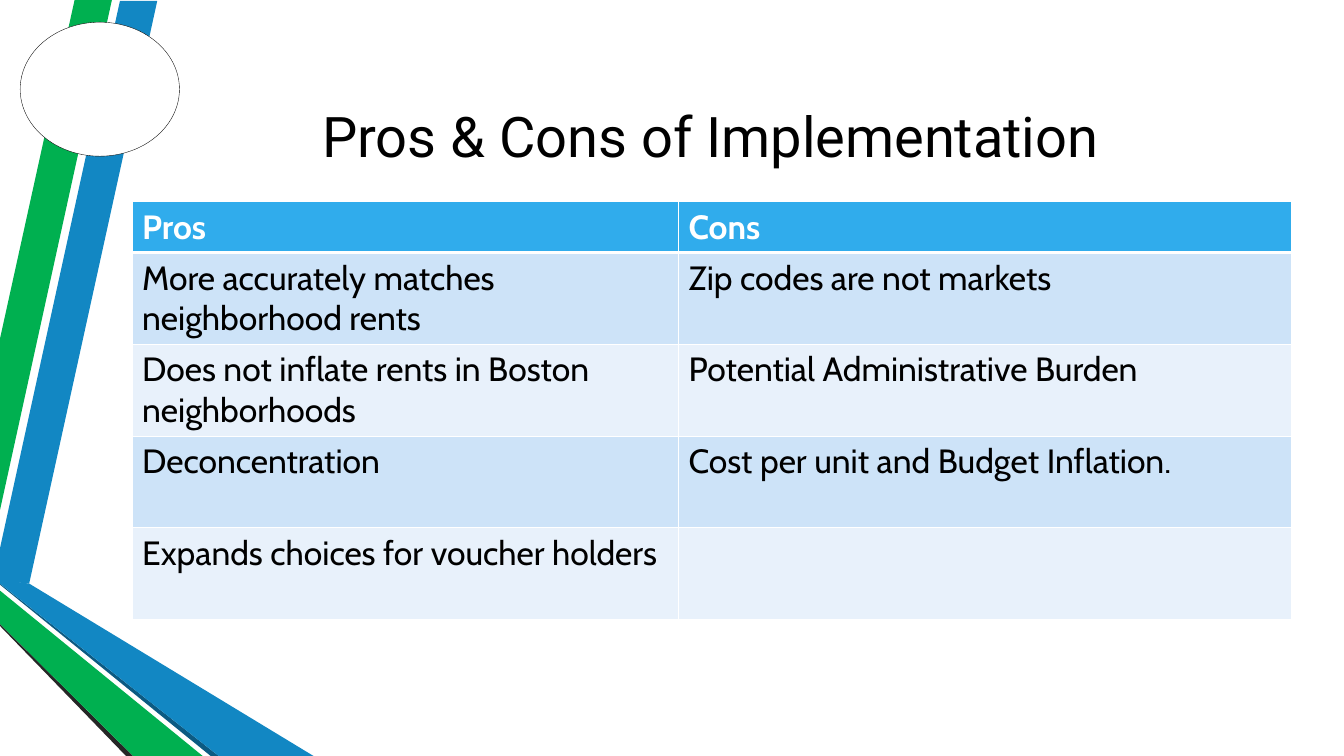
from lxml.etree import SubElement
from pptx import Presentation
from pptx.dml.color import RGBColor
from pptx.enum.shapes import MSO_SHAPE
from pptx.enum.text import MSO_ANCHOR, PP_ALIGN
from pptx.oxml.ns import qn
from pptx.util import Inches, Pt

BLACK = RGBColor(0x00, 0x00, 0x00)
WHITE = RGBColor(0xFF, 0xFF, 0xFF)
BLUE = RGBColor(0x12, 0x87, 0xC3)
DARK_BLUE = RGBColor(0x0C, 0x5A, 0x82)
GREEN = RGBColor(0x00, 0xB0, 0x50)
CHARCOAL = RGBColor(0x26, 0x26, 0x26)
HEADER_BLUE = RGBColor(0x30, 0xAC, 0xEC)
ROW_FILLS = (RGBColor(0xCD, 0xE3, 0xF8), RGBColor(0xE8, 0xF1, 0xFB))

RIBBONS = [
    (BLUE, [(0, 5.44), (0, 5.76), (0.29, 5.79), (1.56, 0.01), (1.19, 0.01)]),
    (GREEN, [(1.11, 0), (0.74, 0), (0, 3.36), (0, 5.06)]),
    (CHARCOAL, [(0, 6.19), (0, 6.21), (1.25, 7.5), (1.32, 7.5)]),
    (DARK_BLUE, [(0, 5.79), (0, 5.8), (2.09, 7.5), (2.17, 7.5)]),
    (BLUE, [(0, 5.79), (2.17, 7.5), (3.11, 7.5), (0.29, 5.79), (0, 5.75)]),
    (GREEN, [(0, 6.19), (1.32, 7.5), (2.01, 7.5), (0, 5.86)]),
]

PROS_AND_CONS = [
    ("Pros", "Cons"),
    ("More accurately matches neighborhood rents", "Zip codes are not markets"),
    ("Does not inflate rents in Boston neighborhoods",
     "Potential Administrative Burden"),
    ("Deconcentration", "Cost per unit and Budget Inflation."),
    ("Expands choices for voucher holders", ""),
]


class SlideBuilder:
    title_font = "Roboto"
    body_font = "Cabin"

    def __init__(self, slide):
        self.slide = slide
        self.shapes = slide.shapes

    def style_text(self, paragraph, name, size, color, bold=False):
        font = paragraph.font
        font.name, font.size, font.bold = name, Pt(size), bold
        font.color.rgb = color

    def title(self, text, left, top, width, height):
        title = self.shapes.title
        title.left, title.top = Inches(left), Inches(top)
        title.width, title.height = Inches(width), Inches(height)
        frame = title.text_frame
        frame.text = text
        frame.vertical_anchor = MSO_ANCHOR.MIDDLE
        paragraph = frame.paragraphs[0]
        paragraph.alignment = PP_ALIGN.CENTER
        self.style_text(paragraph, self.title_font, 40, BLACK)

    def ribbon(self, color, corners):
        points = [(Inches(x), Inches(y)) for x, y in corners]
        builder = self.shapes.build_freeform(*points[0])
        builder.add_line_segments(points[1:], close=True)
        ribbon = builder.convert_to_shape()
        ribbon.shadow.inherit = False
        ribbon.fill.solid()
        ribbon.fill.fore_color.rgb = color
        ribbon.line.fill.background()

    def badge(self, left, top, width, height):
        badge = self.shapes.add_shape(
            MSO_SHAPE.OVAL, Inches(left), Inches(top), Inches(width), Inches(height))
        badge.shadow.inherit = False
        badge.fill.solid()
        badge.fill.fore_color.rgb = WHITE
        badge.line.color.rgb = BLACK
        badge.line.width = Pt(0.25)

    def borders(self, cell, **widths):
        """Draw white cell borders; widths maps L, R, T and B to points."""
        properties = cell._tc.get_or_add_tcPr()
        for side, width in widths.items():
            line = SubElement(properties, qn(f"a:ln{side}"), w=str(Pt(width)))
            fill = SubElement(line, qn("a:solidFill"))
            SubElement(fill, qn("a:srgbClr"), val=str(WHITE))

    def table(self, rows, left, top, column_widths, header_height, row_height):
        heights = [header_height] + [row_height] * (len(rows) - 1)
        table = self.shapes.add_table(
            len(rows), len(column_widths), Inches(left), Inches(top),
            Inches(sum(column_widths)), Inches(sum(heights))).table
        for column, width in zip(table.columns, column_widths):
            column.width = Inches(width)
        for index, (row, height, texts) in enumerate(zip(table.rows, heights, rows)):
            row.height = Inches(height)
            is_header = index == 0
            for cell, text in zip(row.cells, texts):
                cell.text = text
                self.style_text(cell.text_frame.paragraphs[0], self.body_font, 24,
                                WHITE if is_header else BLACK, is_header)
                self.borders(cell, L=1, R=1, T=3 if index == 1 else 1,
                             B=3 if is_header else 1)
                cell.fill.solid()
                cell.fill.fore_color.rgb = (
                    HEADER_BLUE if is_header else ROW_FILLS[(index - 1) % 2])


def main():
    presentation = Presentation()
    presentation.slide_width = Inches(13.33)
    presentation.slide_height = Inches(7.5)
    title_only = presentation.slide_layouts[5]
    builder = SlideBuilder(presentation.slides.add_slide(title_only))
    for color, corners in RIBBONS:
        builder.ribbon(color, corners)
    builder.badge(0.2, 0.22, 1.58, 1.33)
    builder.title("Pros & Cons of Implementation", 1.43, 0.5, 11.23, 1.68)
    builder.table(PROS_AND_CONS, 1.31, 2, (5.42, 6.08), 0.49, 0.91)
    presentation.save("out.pptx")


if __name__ == "__main__":
    main()
